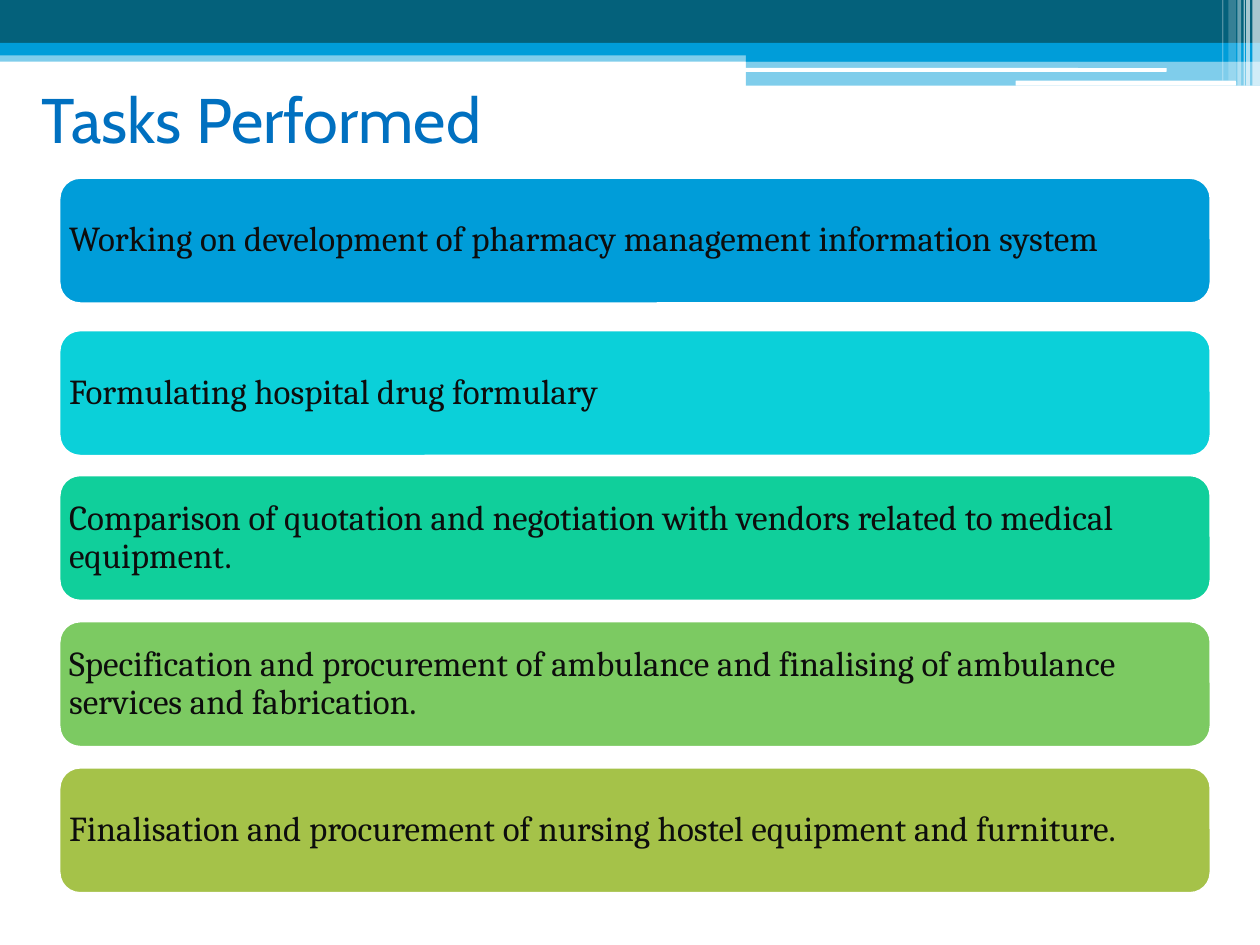
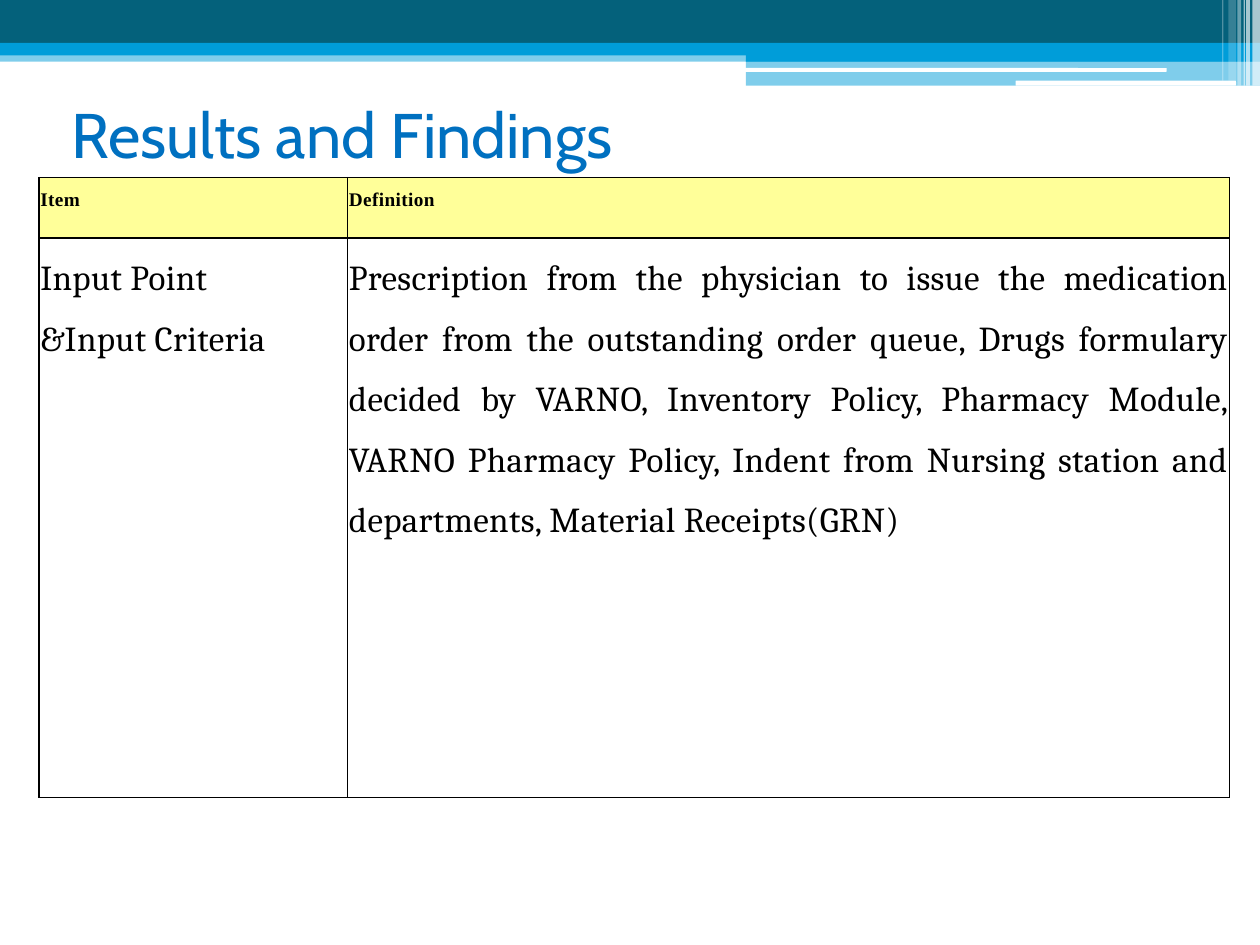
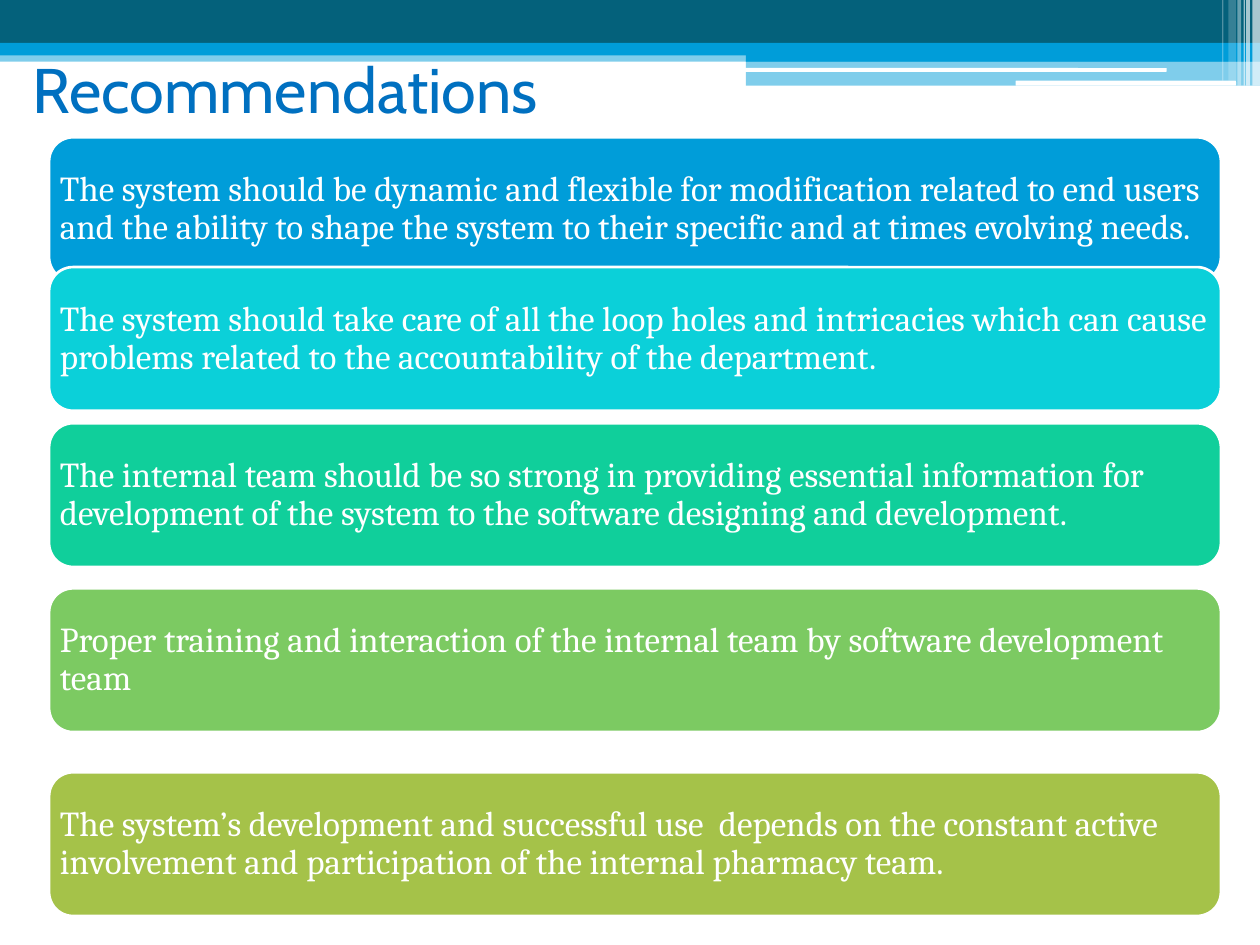
from dataclasses import dataclass
from typing import NamedTuple

from lxml.etree import SubElement
from pptx import Presentation
from pptx.dml.color import RGBColor
from pptx.enum.shapes import MSO_SHAPE
from pptx.enum.text import MSO_ANCHOR, MSO_AUTO_SIZE, PP_ALIGN
from pptx.oxml import parse_xml
from pptx.oxml.ns import nsdecls, qn
from pptx.presentation import Presentation as Deck
from pptx.shapes.autoshape import Shape
from pptx.slide import Slide, SlideLayout
from pptx.table import _Cell
from pptx.util import Emu, Pt

EMU_PER_PX = 9144  # 100 px to the inch


def px(length: int) -> Emu:
    return Emu(length * EMU_PER_PX)


@dataclass(frozen=True)
class Theme:
    teal: str = "04617B"
    blue: str = "009DD9"
    white: str = "FFFFFF"
    black: str = "000000"
    ink: str = "0D0D0D"
    title: str = "0070C0"
    header_fill: str = "FFFF99"
    cards: tuple[str, ...] = ("009DD9", "0BD0D9", "10CF9B", "7CCA62", "A5C249")
    title_font: str = "Cabin"
    body_font: str = "Cambria"
    header_font: str = "Times New Roman"
    title_size: int = 36
    body_size: int = 20
    header_size: int = 11


THEME = Theme()


class Box(NamedTuple):
    left: int
    top: int
    width: int
    height: int

    def emu(self) -> tuple[Emu, ...]:
        return tuple(px(length) for length in self)


class Band(NamedTuple):
    box: Box
    color: str
    opacity: int = 100
    rounded: bool = False


class CardList(NamedTuple):
    title: str
    title_box: Box
    first_card: Box
    tops: tuple[int, ...]
    text_color: str
    texts: tuple[str, ...]


class TableStyle(NamedTuple):
    font: str
    size: int
    bold: bool
    fill: str | None


BANDS = (
    Band(Box(0, 40, 1000, 9), THEME.blue, 50),
    Band(Box(0, 0, 1000, 34), THEME.teal),
    Band(Box(0, 34, 1000, 10), THEME.blue),
    Band(Box(592, 39, 408, 10), THEME.blue),
    Band(Box(592, 48, 408, 20), THEME.blue, 50),
    Band(Box(591, 54, 335, 3), THEME.white, rounded=True),
    Band(Box(806, 64, 175, 4), THEME.white, rounded=True),
    Band(Box(994, 0, 6, 68), THEME.white, 65),
    Band(Box(989, 0, 3, 68), THEME.white, 65),
    Band(Box(987, 0, 1, 68), THEME.white, 60),
    Band(Box(982, 0, 3, 68), THEME.white, 40),
    Band(Box(975, 0, 6, 64), THEME.white, 20),
    Band(Box(970, 0, 1, 64), THEME.white, 30),
)

TASKS = CardList(
    "Tasks Performed",
    Box(23, 55, 900, 78),
    Box(47, 141, 914, 100),
    (141, 262, 377, 493, 609),
    THEME.ink,
    (
        "Working on development of pharmacy management information system",
        "Formulating hospital drug formulary",
        "Comparison of quotation and negotiation with vendors related to medical equipment.",
        "Specification and procurement of ambulance and finalising of ambulance services and fabrication.",
        "Finalisation and procurement of nursing hostel equipment and furniture.",
    ),
)

RECOMMENDATIONS = CardList(
    "Recommendations",
    Box(16, 23, 900, 94),
    Box(39, 109, 930, 114),
    (109, 212, 336, 467, 613),
    THEME.white,
    (
        "The system should be dynamic and flexible for modification related to end users "
        "and the ability to shape the system to their specific and at times evolving needs.",
        "The system should take care of all the loop holes and intricacies which can cause "
        "problems related to the accountability of the department.",
        "The internal team should be so strong in providing essential information for "
        "development of the system to the software designing and development.",
        "Proper training and interaction of the internal team by software development team",
        "The system’s development and successful use  depends on the constant active "
        "involvement and participation of the internal pharmacy team.",
    ),
)

FINDINGS_TITLE = "Results and Findings"
FINDINGS_TITLE_BOX = Box(47, 47, 900, 117)
FINDINGS_BOX = Box(31, 141, 945, 492)
FINDINGS_COLUMNS = (245, 700)
FINDINGS_ROWS = (48, 444)
FINDINGS = (
    ("Item", "Definition"),
    (
        "Input Point\n&Input Criteria",
        "Prescription from the physician to issue the medication order from the outstanding "
        "order queue, Drugs formulary decided by VARNO, Inventory Policy, Pharmacy Module, "
        "VARNO Pharmacy Policy, Indent from Nursing station and departments, "
        "Material Receipts(GRN)",
    ),
)
FINDINGS_STYLES = (
    TableStyle(THEME.header_font, THEME.header_size, True, THEME.header_fill),
    TableStyle(THEME.body_font, THEME.body_size, False, None),
)


def rgb(color: str) -> RGBColor:
    return RGBColor.from_string(color)


def set_font(font, name: str, size: int, color: str, bold: bool = False) -> None:
    font.name = name
    font.size = Pt(size)
    font.color.rgb = rgb(color)
    font.bold = bold


def add_filled(slide: Slide, box: Box, color: str, rounded: bool) -> Shape:
    kind = MSO_SHAPE.ROUNDED_RECTANGLE if rounded else MSO_SHAPE.RECTANGLE
    shape = slide.shapes.add_shape(kind, *box.emu())
    shape.shadow.inherit = False
    shape.fill.solid()
    shape.fill.fore_color.rgb = rgb(color)
    return shape


def add_band(slide: Slide, band: Band) -> Shape:
    shape = add_filled(slide, band.box, band.color, band.rounded)
    shape.line.fill.background()
    if band.opacity < 100:
        color = shape.element.spPr.find(".//" + qn("a:srgbClr"))
        SubElement(color, qn("a:alpha")).set("val", str(band.opacity * 1000))
    return shape


def move_bands_to_layout(slide: Slide, layout: SlideLayout) -> None:
    """Draw the bands on a slide, then hand them to its layout, behind the title."""
    for footer in list(layout.placeholders)[1:]:
        footer.element.getparent().remove(footer.element)
    for position, band in enumerate(BANDS, start=2):
        layout.shapes.element.insert(position, add_band(slide, band).element)


def set_title(slide: Slide, text: str, box: Box) -> None:
    title = slide.shapes.title
    title.left, title.top, title.width, title.height = box.emu()
    frame = title.text_frame
    frame.text = text
    frame.auto_size = MSO_AUTO_SIZE.NONE
    frame.vertical_anchor = MSO_ANCHOR.MIDDLE
    heading = frame.paragraphs[0]
    heading.alignment = PP_ALIGN.LEFT
    set_font(heading.font, THEME.title_font, THEME.title_size, THEME.title)


def add_card(slide: Slide, box: Box, fill: str, text: str, text_color: str) -> None:
    card = add_filled(slide, box, fill, rounded=True)
    card.line.color.rgb = rgb(THEME.white)
    card.line.width = Pt(1.5)
    frame = card.text_frame
    frame.text = text
    frame.word_wrap = True
    frame.vertical_anchor = MSO_ANCHOR.MIDDLE
    frame.margin_left = frame.margin_right = px(3)
    frame.margin_top = frame.margin_bottom = px(3)
    sentence = frame.paragraphs[0]
    sentence.alignment = PP_ALIGN.LEFT
    sentence.line_spacing = 0.9
    set_font(sentence.font, THEME.body_font, THEME.body_size, text_color)


def fill_card_slide(slide: Slide, cards: CardList) -> None:
    set_title(slide, cards.title, cards.title_box)
    for top, fill, text in zip(cards.tops, THEME.cards, cards.texts):
        add_card(slide, cards.first_card._replace(top=top), fill, text, cards.text_color)


def add_borders(cell: _Cell) -> None:
    properties = cell._tc.get_or_add_tcPr()
    for position, side in enumerate("LRTB"):
        border = parse_xml(
            f'<a:ln{side} {nsdecls("a")} w="{Pt(1)}"><a:solidFill>'
            f'<a:srgbClr val="{THEME.black}"/></a:solidFill></a:ln{side}>'
        )
        properties.insert(position, border)


def fill_cell(cell: _Cell, text: str, style: TableStyle) -> None:
    cell.text = text
    cell.margin_left = cell.margin_top = cell.margin_right = px(1)
    cell.margin_bottom = px(0)
    if style.fill:
        cell.fill.solid()
        cell.fill.fore_color.rgb = rgb(style.fill)
    else:
        cell.fill.background()
    add_borders(cell)
    for paragraph in cell.text_frame.paragraphs:
        paragraph.alignment = PP_ALIGN.JUSTIFY
        paragraph.line_spacing = 1.5
        set_font(paragraph.font, style.font, style.size, THEME.black, style.bold)
        for run in paragraph.runs:
            run._r.get_or_add_rPr().set("spc", "20")


def fill_findings_slide(slide: Slide) -> None:
    set_title(slide, FINDINGS_TITLE, FINDINGS_TITLE_BOX)
    table = slide.shapes.add_table(
        len(FINDINGS_ROWS), len(FINDINGS_COLUMNS), *FINDINGS_BOX.emu()
    ).table
    table.first_row = table.horz_banding = False
    for column, width in zip(table.columns, FINDINGS_COLUMNS):
        column.width = px(width)
    for row, height, texts, style in zip(table.rows, FINDINGS_ROWS, FINDINGS, FINDINGS_STYLES):
        row.height = px(height)
        for cell, text in zip(row.cells, texts):
            fill_cell(cell, text, style)


def build_deck() -> Deck:
    deck = Presentation()
    deck.slide_width, deck.slide_height = px(1000), px(750)
    layout = deck.slide_layouts.get_by_name("Title Only")
    tasks, findings, recommendations = (deck.slides.add_slide(layout) for _ in range(3))
    move_bands_to_layout(tasks, layout)
    fill_card_slide(tasks, TASKS)
    fill_findings_slide(findings)
    fill_card_slide(recommendations, RECOMMENDATIONS)
    return deck


if __name__ == "__main__":
    build_deck().save("out.pptx")
